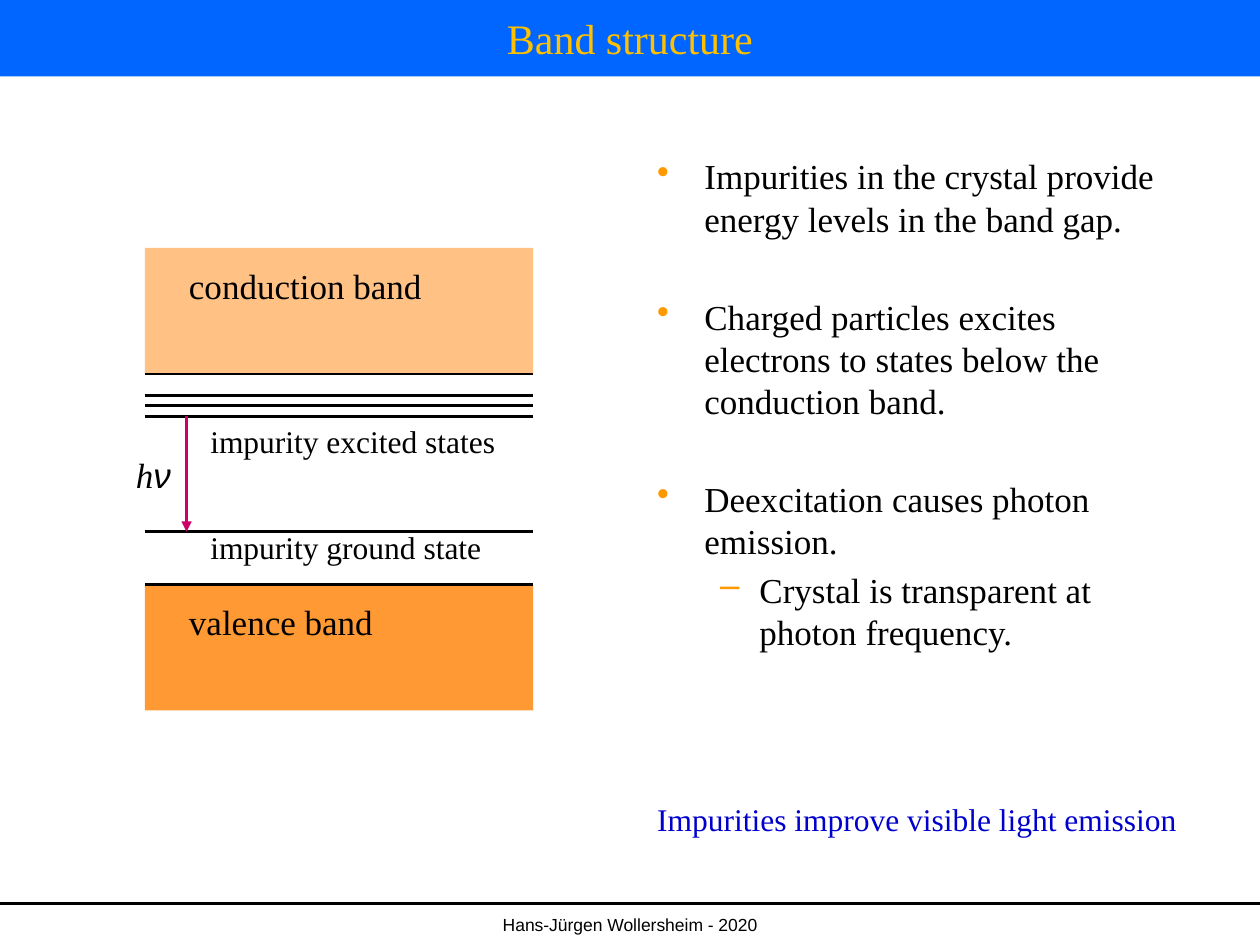
from lxml.etree import SubElement
from pptx import Presentation
from pptx.dml.color import RGBColor
from pptx.enum.shapes import MSO_CONNECTOR, MSO_SHAPE
from pptx.enum.text import MSO_ANCHOR, PP_ALIGN
from pptx.oxml.ns import qn
from pptx.util import Cm, Pt

COLORS = {
    "black": "000000",
    "header": "0066FF",
    "title": "FFC000",
    "band": "FF9933",
    "photon": "CC0066",
    "bullet": "FF9900",
    "conclusion": "0000CC",
}
SERIF, SANS = "Times New Roman", "Arial"
SLIDE_W, SLIDE_H = 25.4, 19.05


def rgb(name):
    return RGBColor.from_string(COLORS[name])


def write(paragraph, text, size=20, font=SERIF, color="black", italic=False,
          align=PP_ALIGN.LEFT):
    """Append a formatted run to the paragraph."""
    paragraph.alignment = align
    run = paragraph.add_run()
    run.text = text
    run.font.size = Pt(size)
    run.font.name = font
    run.font.italic = italic
    run.font.color.rgb = rgb(color)


def add_frame(slide, left, top, width, height, wrap=True):
    box = slide.shapes.add_textbox(Cm(left), Cm(top), Cm(width), Cm(height))
    box.text_frame.word_wrap = wrap
    return box.text_frame


def add_label(slide, left, top, width, height, text, wrap=True, **style):
    frame = add_frame(slide, left, top, width, height, wrap)
    write(frame.paragraphs[0], text, **style)
    return frame


def add_rect(slide, left, top, width, height, color, opacity=100):
    rect = slide.shapes.add_shape(
        MSO_SHAPE.RECTANGLE, Cm(left), Cm(top), Cm(width), Cm(height))
    rect.shadow.inherit = False
    rect.line.fill.background()
    rect.fill.solid()
    rect.fill.fore_color.rgb = rgb(color)
    if opacity < 100:
        clr = rect.fill._xPr.find(".//" + qn("a:srgbClr"))
        SubElement(clr, qn("a:alpha"), val=str(opacity * 1000))
    return rect


def add_line(slide, x1, y1, x2, y2, color="black", arrow=False):
    line = slide.shapes.add_connector(
        MSO_CONNECTOR.STRAIGHT, Cm(x1), Cm(y1), Cm(x2), Cm(y2))
    line.line.color.rgb = rgb(color)
    line.line.width = Pt(1.5)
    if arrow:
        SubElement(line.line._get_or_add_ln(), qn("a:tailEnd"), type="triangle")
    SubElement(line._element.spPr, qn("a:effectLst"))


def add_header(slide, left, top, width, height):
    bar = add_rect(slide, left, top, width, height, "header")
    bar.text_frame.vertical_anchor = MSO_ANCHOR.MIDDLE
    write(bar.text_frame.paragraphs[0], "Band structure", size=24,
          color="title", align=PP_ALIGN.CENTER)


def add_footer(slide, left, top, width, height):
    add_line(slide, left, top, left + width, top)
    add_label(slide, left, top + 0.1, width, height - 0.1,
              "Hans-Jürgen Wollersheim - 2020", size=10, font=SANS,
              align=PP_ALIGN.CENTER)


def add_band_diagram(slide, left, top, width, height):
    band_height = 2.54
    valence = height - band_height
    excited_states = [2.97, 3.18, 3.39]
    ground_state = 5.72

    for name, y, opacity in [("conduction band", 0, 60),
                             ("valence band", valence, 100)]:
        add_rect(slide, left, top + y, width, band_height, "band", opacity)
        add_label(slide, left + 0.64, top + y + 0.2, 6.15, 1.09, name)

    for y in [band_height, *excited_states, ground_state, valence]:
        add_line(slide, left, top + y, left + width, top + y)

    photon_x = left + 0.84
    add_line(slide, photon_x, top + excited_states[-1],
             photon_x, top + ground_state, "photon", arrow=True)
    photon = add_label(slide, left - 0.43, top + 4.01, 1.27, 1.09, "h",
                       italic=True)
    write(photon.paragraphs[0], "ν", font=SANS, italic=True)

    for name, y in [("impurity excited states", excited_states[-1]),
                    ("impurity ground state", ground_state - 0.2)]:
        add_label(slide, left + 1.07, top + y, 7.19, 1.02, name, size=18)


def add_bullets(slide, left, top, width, height):
    # text, bullet, level, left margin, hanging indent, space before
    points = [
        ("Impurities in the crystal provide energy levels in the band gap.",
         "•", 0, 0.95, 0.95, 0),
        ("Charged particles excites electrons to states below the "
         "conduction band.", "•", 0, 0.95, 0.95, 32),
        ("Deexcitation causes photon emission.", "•", 0, 0.95, 0.95, 32),
        ("Crystal is transparent at photon frequency.",
         "–", 1, 2.06, 0.79, 4),
    ]
    frame = add_frame(slide, left, top, width, height)
    for i, (text, mark, level, margin, hanging, before) in enumerate(points):
        paragraph = frame.add_paragraph() if i else frame.paragraphs[0]
        paragraph.level = level
        props = paragraph._p.get_or_add_pPr()
        props.set("marL", str(Cm(margin)))
        props.set("indent", str(-Cm(hanging)))
        bullet_color = SubElement(props, qn("a:buClr"))
        SubElement(bullet_color, qn("a:srgbClr"), val=COLORS["bullet"])
        SubElement(props, qn("a:buChar"), char=mark)
        paragraph.space_before = Pt(before)
        write(paragraph, text)


def main():
    prs = Presentation()
    prs.slide_width, prs.slide_height = Cm(SLIDE_W), Cm(SLIDE_H)
    slide = prs.slides.add_slide(prs.slide_layouts[6])

    add_footer(slide, 0, 18.21, SLIDE_W, SLIDE_H - 18.21)
    add_header(slide, 0, 0, SLIDE_W, 1.54)
    add_band_diagram(slide, 2.92, 5, 7.83, 9.32)
    add_bullets(slide, 13, 3, 10.6, 11.43)
    add_label(slide, 13, 16, 11.1, 1.02,
              "Impurities improve visible light emission",
              wrap=False, size=18, color="conclusion")

    prs.save("out.pptx")


if __name__ == "__main__":
    main()
